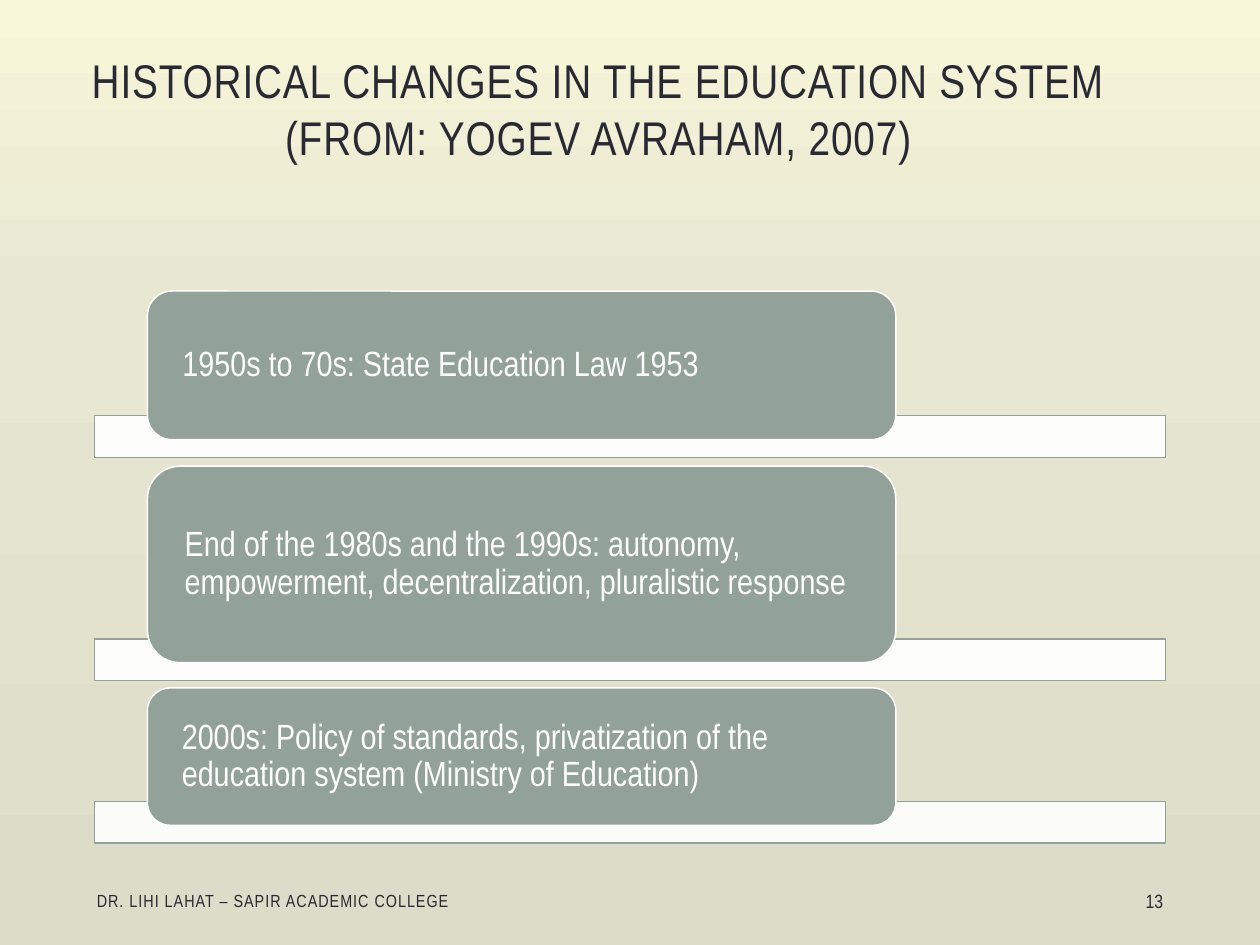
"""Build the slide on historical changes in the education system."""
from copy import deepcopy

from pptx import Presentation
from pptx.dml.color import RGBColor
from pptx.enum.shapes import MSO_SHAPE
from pptx.enum.text import MSO_ANCHOR, MSO_AUTO_SIZE, PP_ALIGN
from pptx.oxml.ns import qn
from pptx.oxml.xmlchemy import OxmlElement
from pptx.util import Inches, Pt

INK = RGBColor(0x29, 0x29, 0x34)
SAGE = RGBColor(0x93, 0xA2, 0x99)
WHITE = RGBColor(0xFF, 0xFF, 0xFF)
BACKGROUND_STOPS = [
    (0, RGBColor(0xF8, 0xF7, 0xD9)),
    (0.31, RGBColor(0xE8, 0xE7, 0xD2)),
    (1, RGBColor(0xDD, 0xDC, 0xC8)),
]
PERIODS = [
    (2.31, 1.18, "1950s to 70s: State Education Law 1953"),
    (3.70, 1.56, "End of the 1980s and the 1990s: autonomy, empowerment, "
                 "decentralization, pluralistic response"),
    (5.46, 1.09, "2000s: Policy of standards, privatization of the "
                 "education system (Ministry of Education)"),
]
FOOTERS = [
    (0.67, 3.17, "DR. LIHI LAHAT – SAPIR ACADEMIC COLLEGE", 10, PP_ALIGN.LEFT, 0.6),
    (8.25, 1.08, "13", 11, PP_ALIGN.RIGHT, 0),
]


def write_text(shape, text, size, color, alignment, anchor, spacing=0):
    frame = shape.text_frame
    frame.text = text
    frame.word_wrap = True
    frame.auto_size = MSO_AUTO_SIZE.NONE
    frame.vertical_anchor = anchor
    paragraph = frame.paragraphs[0]
    paragraph.alignment = alignment
    paragraph.font.name = "Arial Narrow"
    paragraph.font.size = Pt(size)
    paragraph.font.color.rgb = color
    for run in paragraph.runs:
        run.font._element.set("spc", str(round(spacing * 100)))
    return frame


def add_panel(slide, preset, left, top, width, height, fill, line):
    shape = slide.shapes.add_shape(
        preset, Inches(left), Inches(top), Inches(width), Inches(height))
    shape.shadow.inherit = False
    shape.fill.solid()
    shape.fill.fore_color.rgb = fill
    shape.line.color.rgb = line
    shape.line.width = Pt(0.85)
    return shape


presentation = Presentation()
presentation.slide_width = Inches(10)
presentation.slide_height = Inches(7.5)
slide = presentation.slides.add_slide(presentation.slide_layouts[5])

background = slide.background.fill
background.gradient()
background.gradient_angle = 270
stop_list = slide.element.find(".//" + qn("a:gsLst"))
stop_list.append(deepcopy(stop_list[-1]))
for stop, (position, color) in zip(background.gradient_stops, BACKGROUND_STOPS):
    stop.position = position
    stop.color.rgb = color

title = slide.shapes.title
title.left, title.top = Inches(0), Inches(0.44)
title.width, title.height = Inches(9.5), Inches(0.92)
write_text(title, "HISTORICAL CHANGES IN THE EDUCATION SYSTEM\v(FROM: YOGEV AVRAHAM, 2007)",
           27, INK, PP_ALIGN.CENTER, MSO_ANCHOR.BOTTOM, 0.5)

for top, height, text in PERIODS:
    bar = add_panel(slide, MSO_SHAPE.RECTANGLE, 0.75, top + height - 0.19, 8.5, 0.33,
                    WHITE, SAGE)
    alpha = OxmlElement("a:alpha")
    alpha.set("val", "90000")
    bar.fill._xPr.find(qn("a:solidFill"))[0].append(alpha)

    card = add_panel(slide, MSO_SHAPE.ROUNDED_RECTANGLE, 1.17, top, 5.94, height,
                     SAGE, WHITE)
    frame = write_text(card, text, 20, WHITE, PP_ALIGN.LEFT, MSO_ANCHOR.MIDDLE)
    frame.margin_left = frame.margin_right = Inches(0.22)
    frame.margin_top = frame.margin_bottom = Inches(0)
    frame.paragraphs[0].line_spacing = 0.9

for left, width, text, size, alignment, spacing in FOOTERS:
    footer = slide.shapes.add_textbox(Inches(left), Inches(6.95), Inches(width), Inches(0.4))
    write_text(footer, text, size, INK, alignment, MSO_ANCHOR.MIDDLE, spacing)

presentation.save("out.pptx")
